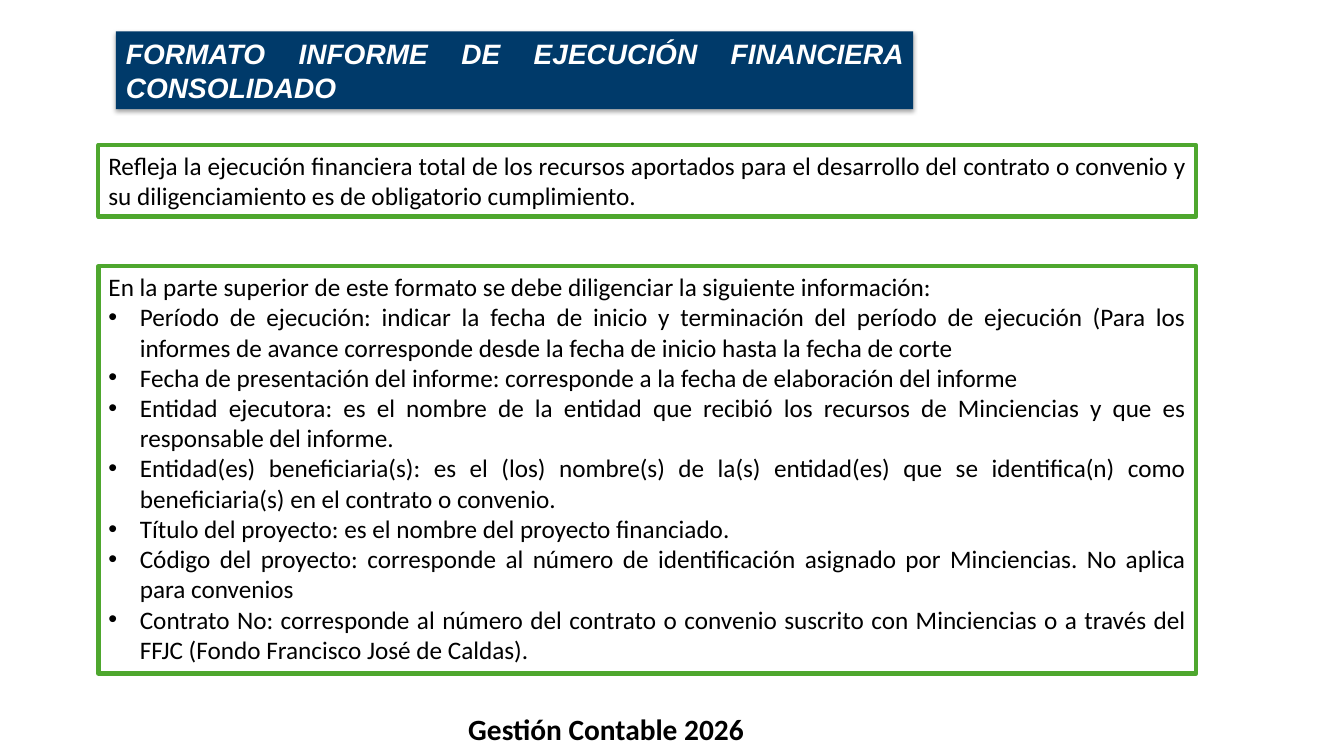
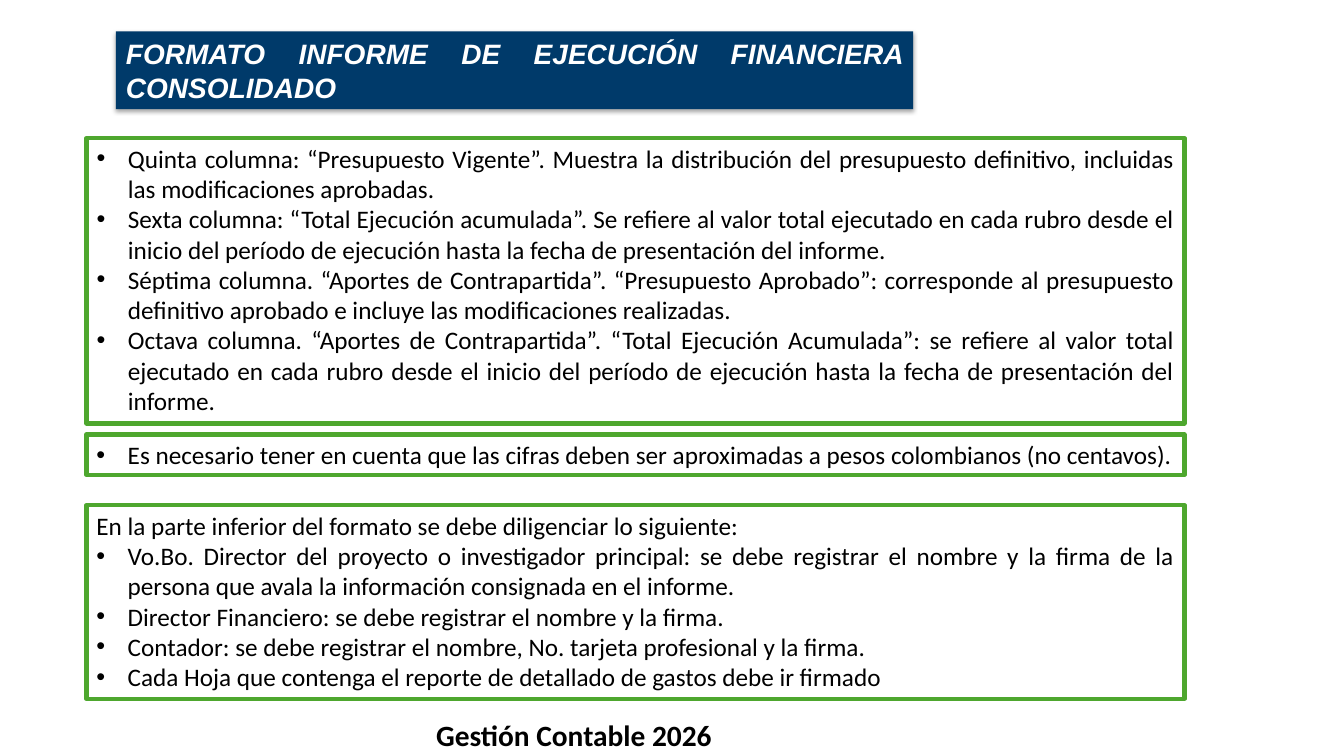
import pptx
import pptx.dml.color
import pptx.enum.shapes
import pptx.enum.text
import pptx.oxml
import pptx.oxml.ns
import pptx.util
from lxml import etree

Cm = pptx.util.Cm
Pt = pptx.util.Pt
RGBColor = pptx.dml.color.RGBColor
PP_ALIGN = pptx.enum.text.PP_ALIGN
MSO_ANCHOR = pptx.enum.text.MSO_ANCHOR
MSO_AUTO_SIZE = pptx.enum.text.MSO_AUTO_SIZE
qn = pptx.oxml.ns.qn

NAVY = RGBColor(0x00, 0x3A, 0x6A)
GREEN = RGBColor(0x4E, 0xA7, 0x2E)
WHITE = RGBColor(0xFF, 0xFF, 0xFF)
BLACK = RGBColor(0x00, 0x00, 0x00)

HEADING = "FORMATO INFORME DE EJECUCIÓN FINANCIERA CONSOLIDADO"
FOOTER = "Gestión Contable 2026"
HEADING_BOX = (2.92, 0.79, 20.09, 1.96)
FOOTER_SIZE = (9.47, 1.22)
PANEL_WIDTH = 27.67
BULLET_INDENT = Cm(0.79)

SHADOW = (
    '<a:effectLst xmlns:a="http://schemas.openxmlformats.org/drawingml/2006/main">'
    '<a:outerShdw blurRad="39370" dist="22860" dir="5400000" rotWithShape="0">'
    '<a:srgbClr val="000000"><a:alpha val="35000"/></a:srgbClr>'
    "</a:outerShdw></a:effectLst>"
)

PURPOSE = (
    "Refleja la ejecución financiera total de los recursos aportados para el desarrollo "
    "del contrato o convenio y su diligenciamiento es de obligatorio cumplimiento."
)
UPPER_INTRO = "En la parte superior de este formato se debe diligenciar la siguiente información:"
UPPER_FIELDS = [
    "Período de ejecución: indicar la fecha de inicio y terminación del período de ejecución "
    "(Para los informes de avance corresponde desde la fecha de inicio hasta la fecha de corte",
    "Fecha de presentación del informe: corresponde a la fecha de elaboración del informe",
    "Entidad ejecutora: es el nombre de la entidad que recibió los recursos de Minciencias "
    "y que es responsable del informe.",
    "Entidad(es) beneficiaria(s): es el (los) nombre(s) de la(s) entidad(es) que se "
    "identifica(n) como beneficiaria(s) en el contrato o convenio.",
    "Título del proyecto: es el nombre del proyecto financiado.",
    "Código del proyecto: corresponde al número de identificación asignado por Minciencias. "
    "No aplica para convenios",
    "Contrato No: corresponde al número del contrato o convenio suscrito con Minciencias "
    "o a través del FFJC (Fondo Francisco José de Caldas).",
]
COLUMNS = [
    "Quinta columna: “Presupuesto Vigente”. Muestra la distribución del presupuesto "
    "definitivo, incluidas las modificaciones aprobadas.",
    "Sexta columna: “Total Ejecución acumulada”. Se refiere al valor total ejecutado en cada "
    "rubro desde el inicio del período de ejecución hasta la fecha de presentación del informe.",
    "Séptima columna. “Aportes de Contrapartida”. “Presupuesto Aprobado”: corresponde al "
    "presupuesto definitivo aprobado e incluye las modificaciones realizadas.",
    "Octava columna. “Aportes de Contrapartida”. “Total Ejecución Acumulada”: se refiere al "
    "valor total ejecutado en cada rubro desde el inicio del período de ejecución hasta la "
    "fecha de presentación del informe.",
]
ROUNDING = [
    "Es necesario tener en cuenta que las cifras deben ser aproximadas a pesos colombianos "
    "(no centavos).",
]
LOWER_INTRO = "En la parte inferior del formato se debe diligenciar lo siguiente:"
SIGNATURES = [
    "Vo.Bo. Director del proyecto o investigador principal: se debe registrar el nombre y la "
    "firma de la persona que avala la información consignada en el informe.",
    "Director Financiero: se debe registrar el nombre y la firma.",
    "Contador: se debe registrar el nombre, No. tarjeta profesional y la firma.",
    "Cada Hoja que contenga el reporte de detallado de gastos debe ir firmado",
]


def place(part, box):
    part.left, part.top, part.width, part.height = (Cm(length) for length in box)


def style_frame(frame, anchor=MSO_ANCHOR.TOP):
    frame.word_wrap = True
    frame.auto_size = MSO_AUTO_SIZE.NONE
    frame.vertical_anchor = anchor


def style_paragraph(paragraph, size, color, align=PP_ALIGN.JUSTIFY, font="Calibri",
                    bold=False, italic=False):
    paragraph.alignment = align
    paragraph.space_before = Pt(0)
    for run in paragraph.runs:
        run.font.name = font
        run.font.size = Pt(size)
        run.font.bold = bold
        run.font.italic = italic
        run.font.color.rgb = color


def set_bullet(paragraph, bulleted):
    properties = paragraph._p.get_or_add_pPr()
    indent = BULLET_INDENT if bulleted else 0
    properties.set("marL", str(int(indent)))
    properties.set("indent", str(-int(indent)))
    if bulleted:
        etree.SubElement(properties, qn("a:buFont")).set("typeface", "Arial")
        etree.SubElement(properties, qn("a:buChar")).set("char", "•")
    else:
        etree.SubElement(properties, qn("a:buNone"))


def fill_heading(slide, box):
    heading = slide.shapes.title
    place(heading, box)
    heading.fill.solid()
    heading.fill.fore_color.rgb = NAVY
    heading._element.spPr.append(pptx.oxml.parse_xml(SHADOW))
    heading.text_frame.text = HEADING
    style_frame(heading.text_frame)
    style_paragraph(heading.text_frame.paragraphs[0], 20, WHITE, font="Arial",
                    bold=True, italic=True)


def add_footer(slide, box):
    footer = slide.shapes.add_shape(
        pptx.enum.shapes.MSO_SHAPE.ROUNDED_RECTANGLE, *(Cm(length) for length in box))
    footer.shadow.inherit = False
    footer.fill.background()
    footer.line.fill.background()
    footer.text_frame.text = FOOTER
    style_frame(footer.text_frame, MSO_ANCHOR.MIDDLE)
    style_paragraph(footer.text_frame.paragraphs[0], 21, BLACK, PP_ALIGN.CENTER, bold=True)


def fill_panel(panel, box, intro, items):
    place(panel, box)
    panel.fill.solid()
    panel.fill.fore_color.rgb = WHITE
    panel.line.color.rgb = GREEN
    panel.line.width = Pt(3)
    frame = panel.text_frame
    style_frame(frame)
    lines = [(intro, False)] if intro else []
    lines += [(item, True) for item in items]
    frame.text = "\n".join(text for text, _ in lines)
    for paragraph, (_, bulleted) in zip(frame.paragraphs, lines):
        set_bullet(paragraph, bulleted)
        style_paragraph(paragraph, 18, BLACK)


def build_report_slide(deck, left, main_panel, side_panels, footer_at):
    slide = deck.slides.add_slide(deck.slide_layouts[1])
    fill_heading(slide, HEADING_BOX)
    top, height, intro, items = main_panel
    fill_panel(slide.placeholders[1], (left, top, PANEL_WIDTH, height), intro, items)
    for top, height, intro, items in side_panels:
        box = (left, top, PANEL_WIDTH, height)
        panel = slide.shapes.add_textbox(*(Cm(length) for length in box))
        fill_panel(panel, box, intro, items)
    add_footer(slide, footer_at + FOOTER_SIZE)


def main():
    deck = pptx.Presentation()
    deck.slide_width = Cm(33.87)
    deck.slide_height = Cm(19.05)
    build_report_slide(
        deck, 2.48,
        main_panel=(6.71, 10.26, UPPER_INTRO, UPPER_FIELDS),
        side_panels=[(3.66, 1.8, PURPOSE, [])],
        footer_at=(10.54, 17.75),
    )
    build_report_slide(
        deck, 2.18,
        main_panel=(3.48, 7.19, None, COLUMNS),
        side_panels=[
            (10.95, 1.02, None, ROUNDING),
            (12.73, 4.88, LOWER_INTRO, SIGNATURES),
        ],
        footer_at=(9.73, 17.91),
    )
    deck.save("out.pptx")


if __name__ == "__main__":
    main()
